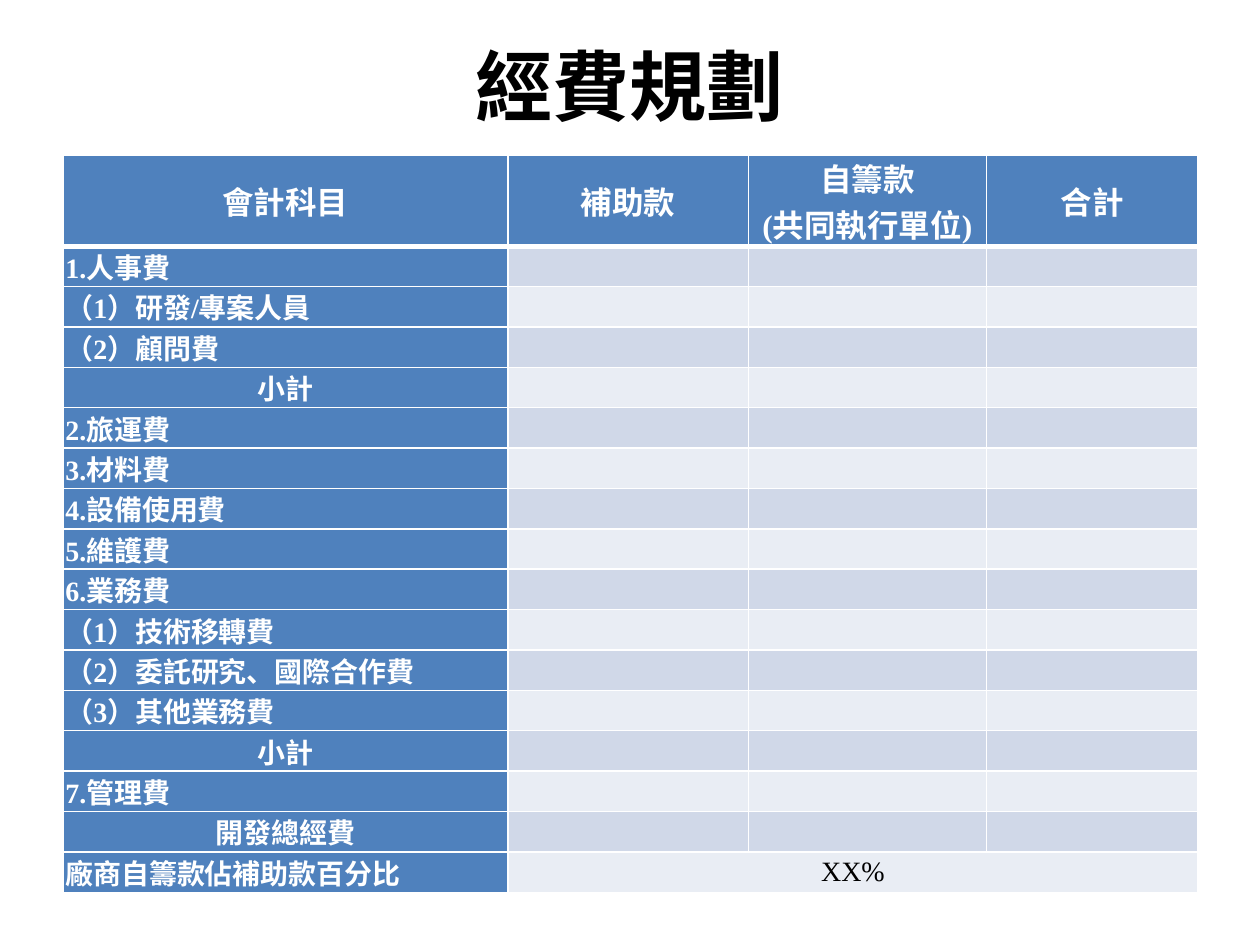
import pptx
import pptx.dml.color
import pptx.enum.text
import pptx.oxml
import pptx.oxml.ns
import pptx.util

RGBColor = pptx.dml.color.RGBColor
BLUE = RGBColor(0x4F, 0x81, 0xBD)
BAND_DARK = RGBColor(0xD0, 0xD8, 0xE8)
BAND_LIGHT = RGBColor(0xE9, 0xED, 0xF4)
WHITE = RGBColor(0xFF, 0xFF, 0xFF)
BLACK = RGBColor(0, 0, 0)
LEFT = pptx.enum.text.PP_ALIGN.LEFT
CENTER = pptx.enum.text.PP_ALIGN.CENTER
MIDDLE = pptx.enum.text.MSO_ANCHOR.MIDDLE
CJK_FONT = "Noto Sans CJK SC"
LATIN_FONT = "Times New Roman"

HEADINGS = ["會計科目", "補助款", "自籌款\n(共同執行單位)", "合計"]
ACCOUNTS = [
    "1.人事費", "（1）研發/專案人員", "（2）顧問費", "小計",
    "2.旅運費", "3.材料費", "4.設備使用費", "5.維護費",
    "6.業務費", "（1）技術移轉費", "（2）委託研究、國際合作費",
    "（3）其他業務費", "小計", "7.管理費", "開發總經費",
    "廠商自籌款佔補助款百分比",
]
TOTALS = {"小計", "開發總經費"}
COLUMN_SHARES = [35.3, 19.1, 18.9, 16.8]
HEADER_SHARE, ROW_SHARE = 8.67, 4.27


def write(frame, text, size=16, color=WHITE, bold=True, align=LEFT, latin=LATIN_FONT):
    frame.text = text
    for paragraph in frame.paragraphs:
        paragraph.alignment = align
        for run in paragraph.runs:
            font = run.font
            font.size, font.bold, font.name = pptx.util.Pt(size), bold, latin
            font.color.rgb = color
            east_asian = pptx.oxml.parse_xml(
                f'<a:ea {pptx.oxml.ns.nsdecls("a")} typeface="{CJK_FONT}"/>')
            font._element.find(pptx.oxml.ns.qn("a:latin")).addnext(east_asian)


class BudgetSlide:
    def __init__(self, deck):
        self.width, self.height = deck.slide_width, deck.slide_height
        self.slide = deck.slides.add_slide(deck.slide_layouts[5])

    def x(self, percent):
        return round(self.width * percent / 100)

    def y(self, percent):
        return round(self.height * percent / 100)

    def title(self, text):
        heading = self.slide.shapes.title
        heading.left, heading.top = self.x(5), self.y(0.67)
        heading.width, heading.height = self.x(90), self.y(16.67)
        heading.text_frame.vertical_anchor = MIDDLE
        write(heading.text_frame, text, size=44, color=BLACK, align=CENTER, latin=CJK_FONT)

    def cell(self, cell, fill, text="", bottom=1, **style):
        cell.margin_left = cell.margin_right = pptx.util.Inches(0.02)
        cell.margin_top = cell.margin_bottom = 0
        cell.vertical_anchor = MIDDLE
        if text:
            write(cell.text_frame, text, **style)
        properties = cell._tc.get_or_add_tcPr()
        for side, points in (("L", 1), ("R", 1), ("T", 1), ("B", bottom)):
            properties.append(pptx.oxml.parse_xml(
                f'<a:ln{side} {pptx.oxml.ns.nsdecls("a")} w="{pptx.util.Pt(points)}">'
                f'<a:solidFill><a:srgbClr val="{WHITE}"/></a:solidFill></a:ln{side}>'))
        cell.fill.solid()
        cell.fill.fore_color.rgb = fill

    def budget(self, headings, accounts, ratio):
        rows = len(accounts) + 1
        table = self.slide.shapes.add_table(
            rows, len(headings), self.x(5), self.y(16.4),
            self.x(sum(COLUMN_SHARES)), self.y(HEADER_SHARE + ROW_SHARE * len(accounts))).table
        for column, share in zip(table.columns, COLUMN_SHARES):
            column.width = self.x(share)
        for index, row in enumerate(table.rows):
            row.height = self.y(ROW_SHARE if index else HEADER_SHARE)
        for column, heading in enumerate(headings):
            self.cell(table.cell(0, column), BLUE, heading, bottom=3, size=18, align=CENTER)
        for row, account in enumerate(accounts, 1):
            self.cell(table.cell(row, 0), BLUE, account,
                      align=CENTER if account in TOTALS else LEFT)
            for column in range(1, len(headings)):
                is_ratio = row == rows - 1 and column == 1
                self.cell(table.cell(row, column), BAND_DARK if row % 2 else BAND_LIGHT,
                          ratio if is_ratio else "", color=BLACK, bold=False, align=CENTER)
        table.cell(rows - 1, 1).merge(table.cell(rows - 1, len(headings) - 1))


def main():
    deck = pptx.Presentation()
    deck.slide_width, deck.slide_height = pptx.util.Inches(10), pptx.util.Inches(7.5)
    page = BudgetSlide(deck)
    page.title("經費規劃")
    page.budget(HEADINGS, ACCOUNTS, "XX%")
    deck.save("out.pptx")


if __name__ == "__main__":
    main()
